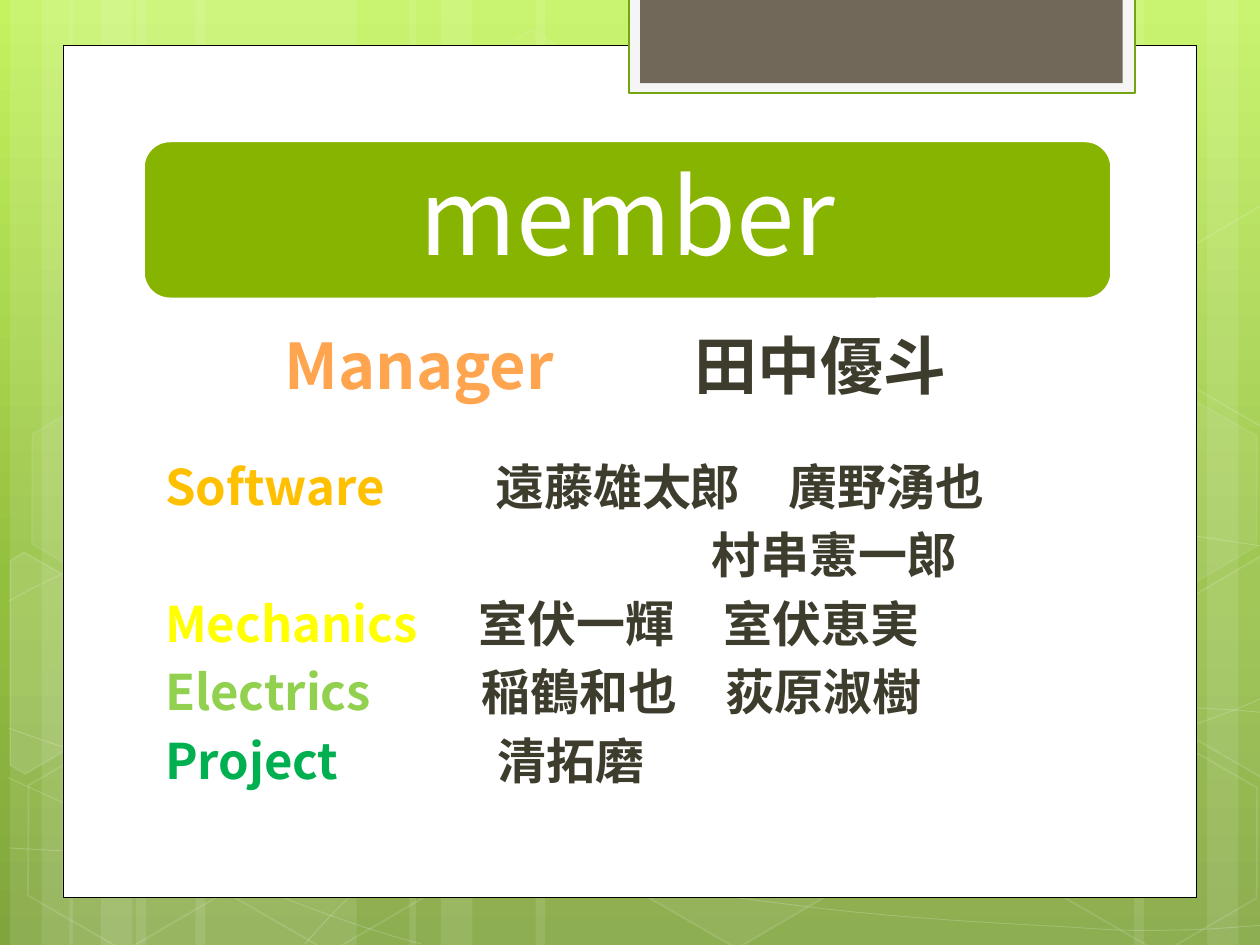
import math

import pptx
import pptx.dml.color
import pptx.enum.shapes
import pptx.enum.text
import pptx.oxml
import pptx.oxml.ns
import pptx.util

Inches = pptx.util.Inches
Pt = pptx.util.Pt
RGBColor = pptx.dml.color.RGBColor
SHAPE = pptx.enum.shapes.MSO_SHAPE
qn = pptx.oxml.ns.qn
NAMESPACE = pptx.oxml.ns.nsdecls("a")

FONT = "Noto Sans CJK JP"
WHITE = RGBColor(0xFF, 0xFF, 0xFF)
BLACK = RGBColor(0, 0, 0)
PALE = RGBColor(0xF5, 0xF5, 0xF5)
TAUPE = RGBColor(0x71, 0x68, 0x5A)
GREEN = RGBColor(0x86, 0xB4, 0x00)
DARK_GREEN = RGBColor(0x74, 0xA5, 0x10)
INK = RGBColor(0x3E, 0x3D, 0x2D)
ORANGE = RGBColor(0xFF, 0xA4, 0x4F)
AMBER = RGBColor(0xFF, 0xC0, 0x00)
YELLOW = RGBColor(0xFF, 0xFF, 0x00)
LIME = RGBColor(0x92, 0xD0, 0x50)
EMERALD = RGBColor(0x00, 0xB0, 0x50)
BACKGROUND = [(0, RGBColor(0xC3, 0xF3, 0x5F)), (62, RGBColor(0x93, 0xBF, 0x3F)),
              (100, RGBColor(0x81, 0xA5, 0x3E))]

# Team rows: role, role colour, names, tab stops measured from the text edge
TEXT_LEFT = 1.31
MANAGER = ("\tManager", ORANGE, "田中優斗", [0.95, 4.2])
TEAMS = [
    ("Software", AMBER, "遠藤雄太郎　廣野湧也", [2.62]),
    ("", INK, "村串憲一郎", [4.34]),
    ("Mechanics", YELLOW, "室伏一輝　室伏恵実", [2.49]),
    ("Electrics", LIME, "稲鶴和也　荻原淑樹", [2.51]),
    ("Project", EMERALD, "清拓磨", [2.64]),
]

# Backdrop: bands (left, width), curves (start, then cubic or straight segments),
# hexagons (left, top, fill opacity, line opacity), cut hexagons (centre, fill opacity, points)
TILT = 30
BANDS = [(1.08, 1.75), (0.08, 0.5), (0.33, 0.83), (1.55, 1.75), (0.55, 0.5), (0.8, 0.83),
         (7.33, 1.75), (9.58, 0.5), (9, 0.83), (4.25, 3.08), (3.25, 0.5), (3.5, 0.83)]
CURVES = [
    ((0.07, 6.73), [(0.61, 6.76, 1.15, 6.79, 1.9, 6.78), (2.65, 6.77, 3.58, 6.75, 4.58, 6.65),
                    (5.58, 6.55, 7, 6.36, 7.92, 6.17), (8.83, 5.98, 9.77, 5.68, 10.07, 5.51)]),
    ((0.07, 4.77), [(0.36, 4.61, 0.65, 4.46, 1.21, 4.31), (1.78, 4.16, 2.59, 3.94, 3.47, 3.87),
                    (4.36, 3.8, 5.44, 3.79, 6.54, 3.87), (7.64, 3.95, 9.47, 4.26, 10.07, 4.34)]),
    ((0.06, 6.17), [(1.27, 6.72, 2.47, 7.27, 3.34, 7.49)]),
    ((0.07, 5.78), [(0.38, 5.89, 0.7, 6, 1.28, 6.16), (1.86, 6.31, 2.73, 6.56, 3.57, 6.73),
                    (4.4, 6.9, 5.45, 7.08, 6.28, 7.18), (7.11, 7.29, 8, 7.33, 8.53, 7.36),
                    (9.05, 7.4, 9.19, 7.38, 9.45, 7.38), (9.71, 7.37, 9.89, 7.35, 10.07, 7.34)]),
    ((2.42, 7.49), [(2.6, 7.29, 2.78, 7.09, 3.02, 6.91), (3.26, 6.73, 3.6, 6.53, 3.88, 6.39),
                    (4.16, 6.25, 4.33, 6.19, 4.7, 6.09), (5.06, 5.99, 5.73, 5.85, 6.08, 5.78),
                    (6.44, 5.71, 6.49, 5.71, 6.8, 5.69), (7.11, 5.66, 7.6, 5.63, 7.94, 5.62),
                    (8.29, 5.61, 8.86, 5.62, 8.86, 5.62), (9.53, 5.62),
                    (9.71, 5.63, 9.88, 5.64, 9.97, 5.65), (10.06, 5.66, 10.03, 5.65, 10.06, 5.66)]),
]
HEXAGONS = [(3.34, 0.36, 4, 8), (4.97, 5.89, 6, 12), (0.11, 5.91, 0, 12),
            (0.14, 3.12, 7, 8), (1.74, 5.92, 0, 12), (7.53, 4.53, 10, 12),
            (8.34, 5.93, 0, 12), (8.34, 3.14, 7, 8)]
CUT_HEXAGONS = [
    ((0.36, 5.35), 10, [(0.08, 4.45), (0.19, 4.38), (0.96, 4.82), (0.95, 5.7),
                        (0.2, 6.14), (0.08, 6.07)]),
    ((9.85, 5.2), 4, [(9.26, 4.85), (10.01, 4.41), (10.09, 4.46), (10.09, 6.13),
                      (10.02, 6.17), (9.26, 5.73)]),
    ((9.85, 2.41), 0, [(9.26, 2.07), (10.01, 1.63), (10.1, 1.68), (10.09, 3.35),
                       (10.02, 3.39), (9.26, 2.95)]),
]

# Panels: preset, box, fill, line, line width
PANELS = [
    (SHAPE.RECTANGLE, (0.5, 0.36, 9, 6.76), WHITE, BLACK, 0.5),
    (SHAPE.RECTANGLE, (4.99, -0.02, 4.02, 0.76), PALE, DARK_GREEN, 1.25),
    (SHAPE.RECTANGLE, (5.08, -0.02, 3.83, 0.68), TAUPE, None, 0),
    (SHAPE.ROUNDED_RECTANGLE, (1.14, 1.12, 7.68, 1.25), GREEN, WHITE, 1.25),
]


def paint(shape, fill=None, line=None, width=1, fill_opacity=100, line_opacity=100):
    shape.shadow.inherit = False
    for target, color, opacity in ((shape.fill, fill, fill_opacity),
                                   (shape.line.fill, line, line_opacity)):
        if color is None or opacity == 0:
            target.background()
            continue
        target.solid()
        target.fore_color.rgb = color
        if opacity < 100:
            target._xPr.find(qn("a:solidFill"))[0].append(
                pptx.oxml.parse_xml(f'<a:alpha {NAMESPACE} val="{opacity * 1000}"/>'))
    if line is not None:
        shape.line.width = Pt(width)


def add_preset(slide, preset, box):
    return slide.shapes.add_shape(preset, *map(Inches, box))


def add_outline(slide, points, close):
    points = [(Inches(x), Inches(y)) for x, y in points]
    builder = slide.shapes.build_freeform(*points[0])
    builder.add_line_segments(points[1:], close=close)
    return builder.convert_to_shape()


def add_curve(slide, start, segments):
    pairs = [list(zip(segment[::2], segment[1::2])) for segment in segments]
    shape = add_outline(slide, [start] + sum(pairs, []), False)
    lines = iter(list(shape._element.iter(qn("a:lnTo"))))
    for pair in pairs:
        group = [next(lines) for _ in pair]
        if len(group) == 3:
            cubic = pptx.oxml.parse_xml(f"<a:cubicBezTo {NAMESPACE}/>")
            group[0].addprevious(cubic)
            for line in group:
                cubic.append(line[0])
                line.getparent().remove(line)
    return shape


def turn_back(points, center):
    cosine, sine = math.cos(math.radians(TILT)), math.sin(math.radians(TILT))
    offsets = [(x - center[0], y - center[1]) for x, y in points]
    return [(center[0] + x * cosine + y * sine, center[1] - x * sine + y * cosine)
            for x, y in offsets]


def add_text_frame(slide, box, insets, anchor):
    frame = slide.shapes.add_textbox(*map(Inches, box)).text_frame
    settings = dict(zip(("margin_left", "margin_top", "margin_right", "margin_bottom"),
                        map(Inches, insets)), word_wrap=True, vertical_anchor=anchor)
    for name, value in settings.items():
        setattr(frame, name, value)
    return frame


def add_run(paragraph, text, size, color, bold):
    run = paragraph.add_run()
    run.text = text
    for name, value in {"size": Pt(size), "bold": bold, "name": FONT}.items():
        setattr(run.font, name, value)
    run.font.color.rgb = color
    run.font._element.append(pptx.oxml.parse_xml(f'<a:ea {NAMESPACE} typeface="{FONT}"/>'))


def add_team(paragraph, team, size, line_height, space_before=0):
    role, color, names, stops = team
    paragraph.line_spacing = Pt(line_height)
    paragraph.space_before = Pt(space_before)
    tabs = "".join(f'<a:tab pos="{Inches(stop)}" algn="l"/>' for stop in stops)
    paragraph._p.get_or_add_pPr().append(
        pptx.oxml.parse_xml(f"<a:tabLst {NAMESPACE}>{tabs}</a:tabLst>"))
    if role:
        add_run(paragraph, role, size, color, True)
    add_run(paragraph, "\t" + names, size, INK, True)


def add_backdrop(slide):
    fill = slide.background.fill
    fill.gradient()
    fill.gradient_angle = 270
    stops = next(slide.element.iter(qn("a:gsLst")))
    for stop in list(stops):
        stops.remove(stop)
    for position, color in BACKGROUND:
        stops.append(pptx.oxml.parse_xml(
            f'<a:gs {NAMESPACE} pos="{position * 1000}"><a:srgbClr val="{color}"/></a:gs>'))
    for left, width in BANDS:
        paint(add_preset(slide, SHAPE.RECTANGLE, (left, 0, width, 7.5)), WHITE, fill_opacity=10)
    for start, segments in CURVES:
        paint(add_curve(slide, start, segments), line=WHITE, width=0.5, line_opacity=20)
    for left, top, fill_opacity, line_opacity in HEXAGONS:
        hexagon = add_preset(slide, SHAPE.HEXAGON, (left, top, 1.75, 1.52))
        hexagon.adjustments[0] = 0.285
        hexagon.rotation = TILT
        paint(hexagon, WHITE, WHITE, 1, fill_opacity, line_opacity)
    for center, fill_opacity, points in CUT_HEXAGONS:
        hexagon = add_outline(slide, turn_back(points, center), True)
        hexagon.rotation = TILT
        paint(hexagon, WHITE, WHITE, 1, fill_opacity, 12)


def main():
    presentation = pptx.Presentation()
    presentation.slide_width, presentation.slide_height = Inches(10), Inches(7.5)
    slide = presentation.slides.add_slide(presentation.slide_layouts[6])
    add_backdrop(slide)
    for preset, box, fill, line, width in PANELS:
        paint(add_preset(slide, preset, box), fill, line, width)
    # Title
    anchors = pptx.enum.text.MSO_ANCHOR
    frame = add_text_frame(slide, (1.2, 1.19, 7.56, 1.13), [0.25] * 4, anchors.MIDDLE)
    title = frame.paragraphs[0]
    title.alignment = pptx.enum.text.PP_ALIGN.CENTER
    title.line_spacing = 0.9
    add_run(title, "member", 60, WHITE, False)
    # Members
    left = 1.14
    frame = add_text_frame(slide, (left, 2.54, 7.41, 3.84),
                           (TEXT_LEFT - left, 0.05, 0.1, 0.05), anchors.TOP)
    add_team(frame.paragraphs[0], MANAGER, 36, 43.5)
    for index, team in enumerate(TEAMS):
        add_team(frame.add_paragraph(), team, 28, 39.1, 0 if index else 25.4)
    presentation.save("out.pptx")


if __name__ == "__main__":
    main()
